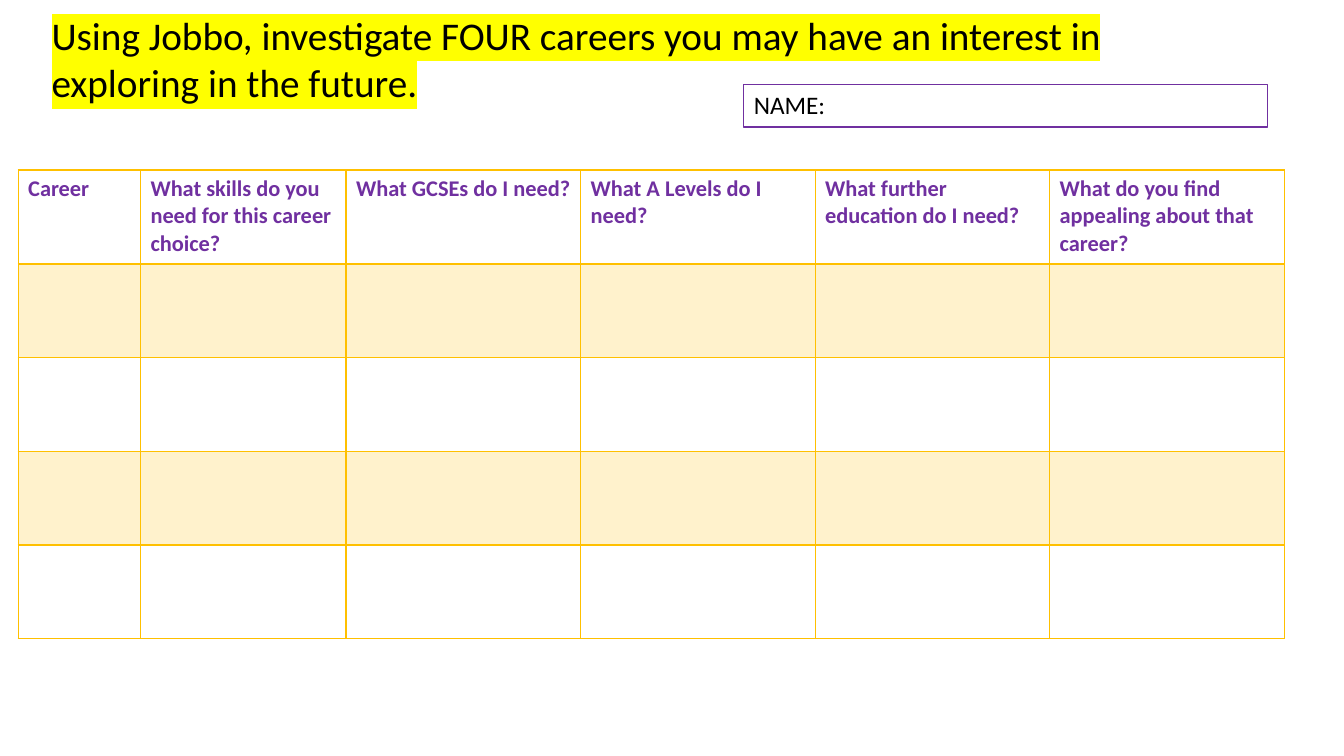
from lxml import etree
from pptx import Presentation
from pptx import util as u
from pptx.dml.color import RGBColor
from pptx.enum import shapes, text
from pptx.oxml import ns

WIDTH, HEIGHT = 13.33, 7.5
BLACK, PURPLE, GOLD, YELLOW = "000000", "7030A0", "FFC000", "FFFF00"


def colour(hex_code):
    return RGBColor.from_string(hex_code)


def add_colour(parent, hex_code):
    return etree.SubElement(parent, ns.qn("a:srgbClr"), val=hex_code)


class Worksheet:
    """Places elements by percentages of the slide's width and height."""

    font = "Calibri"

    def __init__(self, prs):
        self.slide = prs.slides.add_slide(prs.slide_layouts[6])

    def across(self, share):
        return u.Inches(WIDTH * share / 100)

    def down(self, share):
        return u.Inches(HEIGHT * share / 100)

    def area(self, left, top, width, height):
        return self.across(left), self.down(top), self.across(width), self.down(height)

    def add_words(self, frame, words, size, ink=BLACK, bold=False, highlight=None):
        frame.word_wrap = True
        paragraph = frame.paragraphs[0]
        paragraph.alignment = text.PP_ALIGN.LEFT
        run = paragraph.add_run()
        run.text = words
        run.font.size = u.Pt(size)
        run.font.bold = bold
        run.font.color.rgb = colour(ink)
        if highlight:
            marker = etree.Element(ns.qn("a:highlight"))
            add_colour(marker, highlight)
            run._r.get_or_add_rPr().find(ns.qn("a:solidFill")).addnext(marker)
        run.font.name = self.font

    def text_box(self, area, words, size, **style):
        box = self.slide.shapes.add_textbox(*self.area(*area))
        self.add_words(box.text_frame, words, size, **style)

    def outlined_box(self, area, words, size, line):
        box = self.slide.shapes.add_shape(
            shapes.MSO_SHAPE.RECTANGLE, *self.area(*area))
        box.shadow.inherit = False
        box.fill.background()
        box.line.color.rgb = colour(line)
        box.line.width = u.Pt(0.75)
        box.text_frame.vertical_anchor = text.MSO_ANCHOR.TOP
        self.add_words(box.text_frame, words, size)

    def border(self, cell, bottom):
        props = cell._tc.get_or_add_tcPr()
        for side, points in (("L", 1), ("R", 1), ("T", 1), ("B", bottom)):
            edge = etree.SubElement(props, ns.qn(f"a:ln{side}"), w=str(u.Pt(points)))
            add_colour(etree.SubElement(edge, ns.qn("a:solidFill")), GOLD)

    def tint(self, cell, opacity):
        cell.fill.solid()
        cell.fill.fore_color.rgb = colour(GOLD)
        shade = cell._tc.tcPr.find(ns.qn("a:solidFill"))[0]
        etree.SubElement(shade, ns.qn("a:alpha"), val=str(opacity * 1000))

    def table(self, left, top, columns, row_height, row_count):
        area = self.area(left, top, sum(share for _, share in columns),
                         row_height * row_count)
        grid = self.slide.shapes.add_table(row_count, len(columns), *area).table
        grid.first_row = grid.horz_banding = False
        for column, (_, share) in zip(grid.columns, columns):
            column.width = self.across(share)
        for index, row in enumerate(grid.rows):
            row.height = self.down(row_height)
            for cell, (question, _) in zip(row.cells, columns):
                self.border(cell, bottom=2 if index == 0 else 1)
                if index % 2:
                    self.tint(cell, 20)
                else:
                    cell.fill.background()
                if index == 0:
                    self.add_words(cell.text_frame, question, 16, PURPLE, bold=True)


def main():
    prs = Presentation()
    prs.slide_width, prs.slide_height = u.Inches(WIDTH), u.Inches(HEIGHT)
    sheet = Worksheet(prs)

    # Career table: question and column width
    questions = [
        ("Career", 9.1),
        ("What skills do you need for this career choice?", 15.3),
        ("What GCSEs do I need?", 17.45),
        ("What A Levels do I need?", 17.45),
        ("What further education do I need?", 17.45),
        ("What do you find appealing about that career?", 17.45),
    ]
    sheet.table(1.35, 22.5, questions, row_height=12.4, row_count=5)

    # Task
    sheet.text_box(
        (3.1, 0.9, 87.5, 13.9),
        "Using Jobbo, investigate FOUR careers you may have an interest in "
        "exploring in the future.",
        28, highlight=YELLOW)

    # Name field
    sheet.outlined_box((55.35, 11.2, 38.95, 5.6), "NAME:", 18, PURPLE)

    prs.save("out.pptx")


if __name__ == "__main__":
    main()
